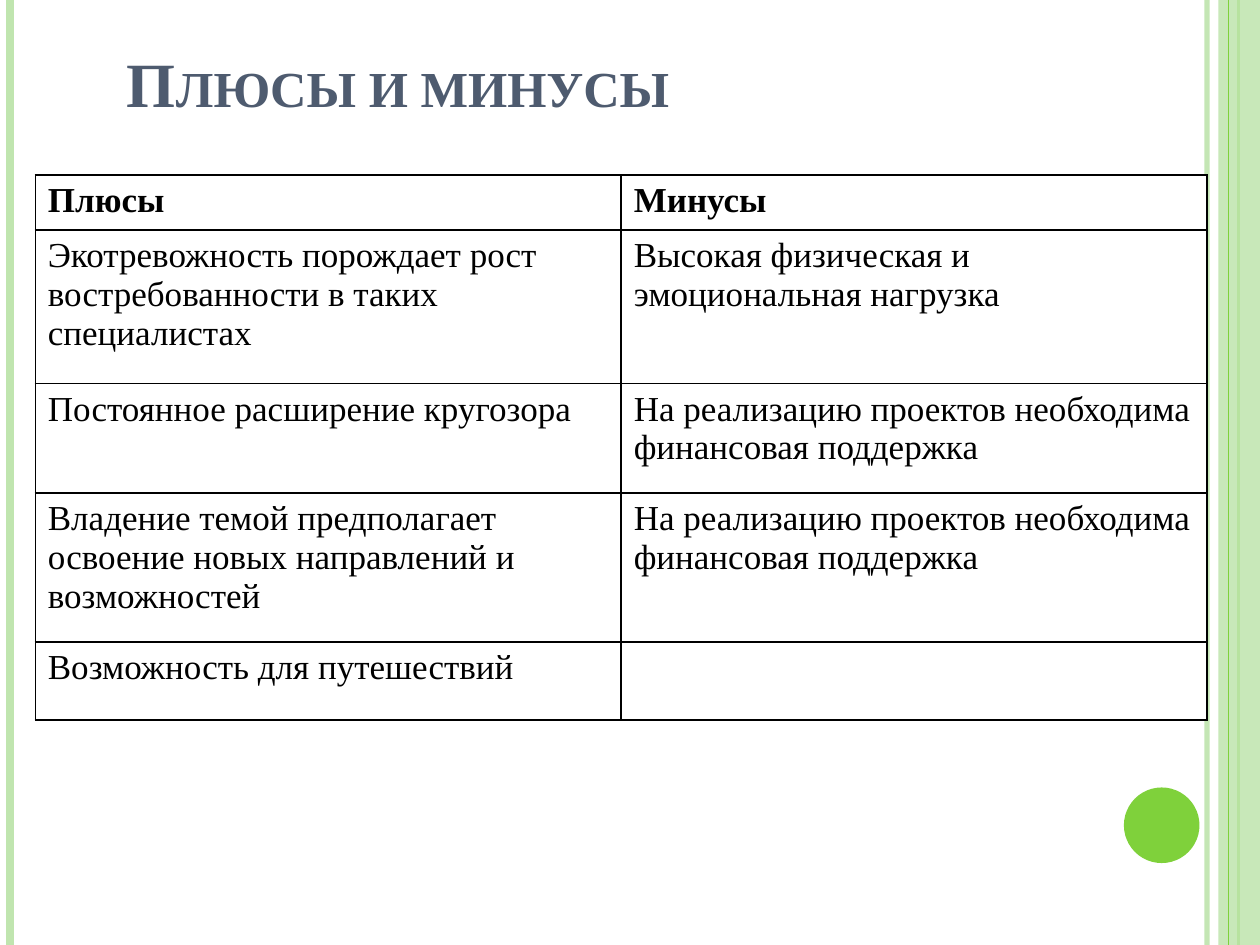
import pptx
import pptx.dml.color
import pptx.enum.shapes
import pptx.enum.text
import pptx.oxml.ns
import pptx.util
from lxml import etree

Inches, Pt = pptx.util.Inches, pptx.util.Pt
RGBColor = pptx.dml.color.RGBColor
SHAPE = pptx.enum.shapes.MSO_SHAPE
qn = pptx.oxml.ns.qn

PALE_GREEN = RGBColor(0xC0, 0xE5, 0xAF)
GREEN = RGBColor(0x7F, 0xD1, 0x3B)
SLATE = RGBColor(0x4E, 0x5B, 0x6F)
BLACK = RGBColor(0, 0, 0)
WHITE = RGBColor(255, 255, 255)
FONT = "Times New Roman"

# Content
TITLE = "Плюсы и минусы"
ROWS = [  # height, pros, cons
    (0.41, "Плюсы", "Минусы"),
    (1.22, "Экотревожность порождает рост востребованности в таких специалистах",
     "Высокая физическая и эмоциональная нагрузка"),
    (0.87, "Постоянное расширение кругозора",
     "На реализацию проектов необходима финансовая поддержка"),
    (1.18, "Владение темой предполагает освоение новых направлений и возможностей",
     "На реализацию проектов необходима финансовая поддержка"),
    (0.62, "Возможность для путешествий", ""),
]
COLUMN_WIDTH = 4.65
STRIPES_BELOW = [  # x, colour, width in points, opacity in percent
    (9.58, PALE_GREEN, 3, 93),
    (0.08, PALE_GREEN, 4.5, 100),
    (9.83, GREEN, 1.5, 100),
]
STRIPES_ABOVE = [(9.75, GREEN, 0.75, 100)]

deck = pptx.Presentation()
deck.slide_width, deck.slide_height = Inches(10), Inches(7.5)
slide = deck.slides.add_slide(deck.slide_layouts[6])


def set_opacity(part, percent):
    for colour in part._element.iter(qn("a:srgbClr")):
        etree.SubElement(colour, qn("a:alpha"), val=str(percent * 1000))


def add_stripes(stripes):
    for x, colour, width, opacity in stripes:
        stripe = slide.shapes.add_connector(
            pptx.enum.shapes.MSO_CONNECTOR.STRAIGHT,
            Inches(x), 0, Inches(x), deck.slide_height)
        stripe.line.color.rgb = colour
        stripe.line.width = Pt(width)
        if opacity < 100:
            set_opacity(stripe, opacity)
        etree.SubElement(stripe._element.spPr, qn("a:effectLst"))


def add_plain(kind, left, top, width, height, colour):
    plain = slide.shapes.add_shape(
        kind, Inches(left), Inches(top), Inches(width), Inches(height))
    plain.shadow.inherit = False
    plain.fill.solid()
    plain.fill.fore_color.rgb = colour
    plain.line.fill.background()
    return plain


def set_font(font, size, colour, bold):
    for name, value in {"name": FONT, "size": Pt(size), "bold": bold}.items():
        setattr(font, name, value)
    font.color.rgb = colour


def add_borders(cell):
    properties = cell._tc.get_or_add_tcPr()
    for side in ("lnL", "lnR", "lnT", "lnB"):
        border = etree.SubElement(properties, qn("a:" + side), w=str(Pt(1)))
        fill = etree.SubElement(border, qn("a:solidFill"))
        etree.SubElement(fill, qn("a:srgbClr"), val=str(BLACK))


# Side decoration
add_stripes(STRIPES_BELOW)
set_opacity(add_plain(SHAPE.RECTANGLE, 9.67, 0, 0.33, 7.5, PALE_GREEN), 87)
add_stripes(STRIPES_ABOVE)
add_plain(SHAPE.OVAL, 8.92, 6.25, 0.6, 0.6, GREEN)

# Title
title = slide.shapes.add_textbox(
    Inches(0.91), Inches(0.29), Inches(8.17), Inches(0.71)).text_frame
title.word_wrap = True
title.vertical_anchor = pptx.enum.text.MSO_ANCHOR.BOTTOM
title_run = title.paragraphs[0].add_run()
title_run.text = TITLE
set_font(title_run.font, 36, SLATE, True)
title_run._r.get_or_add_rPr().set("cap", "small")

# Table of pros and cons
table = slide.shapes.add_table(
    len(ROWS), 2, Inches(0.28), Inches(1.39), Inches(2 * COLUMN_WIDTH),
    Inches(sum(row[0] for row in ROWS))).table
for column in table.columns:
    column.width = Inches(COLUMN_WIDTH)
for r, (height, *texts) in enumerate(ROWS):
    table.rows[r].height = Inches(height)
    for c, text in enumerate(texts):
        cell = table.cell(r, c)
        add_borders(cell)
        cell.fill.solid()
        cell.fill.fore_color.rgb = WHITE
        if text:
            run = cell.text_frame.paragraphs[0].add_run()
            run.text = text
            set_font(run.font, 20, BLACK, r == 0)

deck.save("out.pptx")
